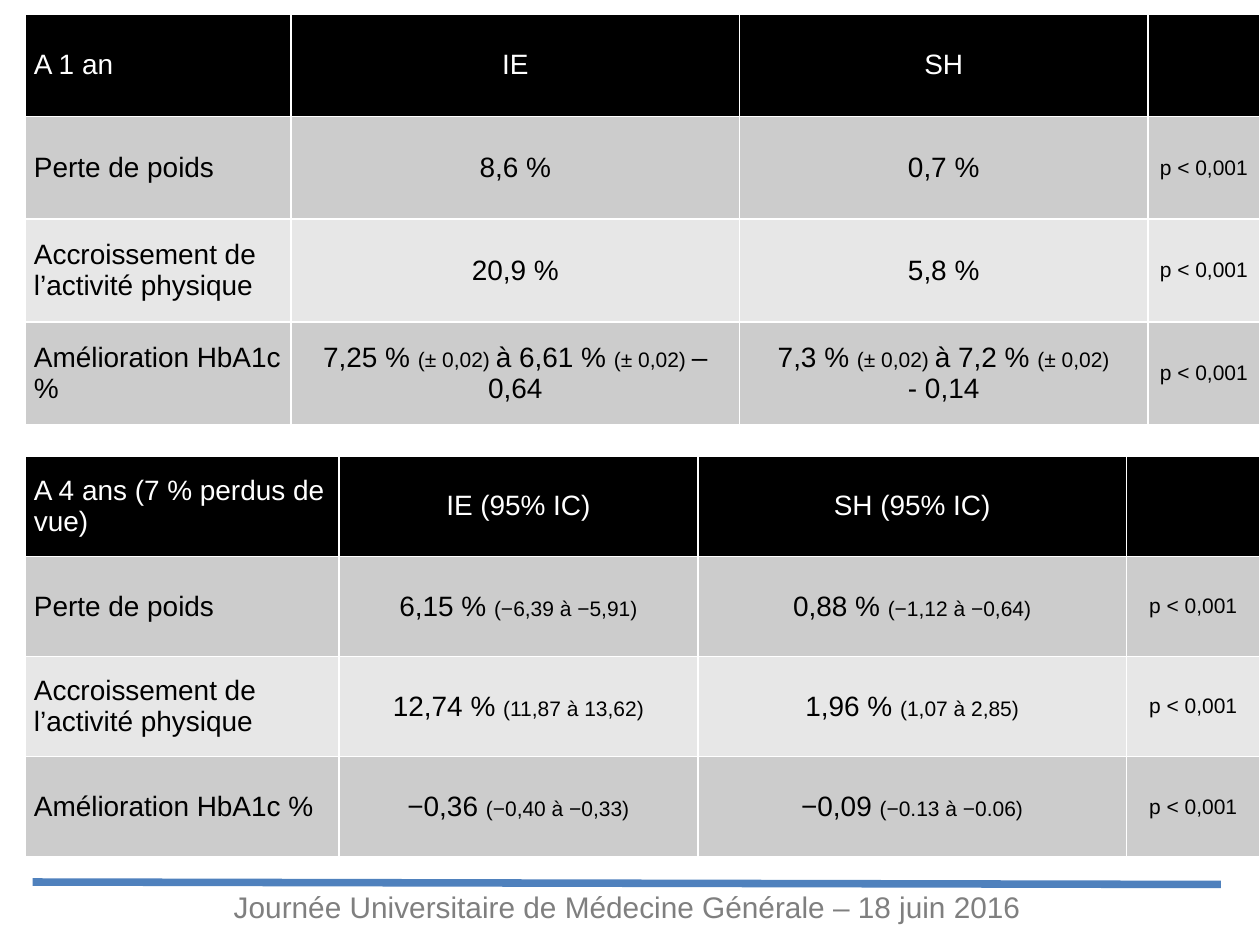
from lxml import etree
from pptx import Presentation
from pptx.dml.color import RGBColor
from pptx.enum import shapes, text
from pptx.oxml import ns
from pptx.util import Inches, Pt

BLACK = RGBColor(0x00, 0x00, 0x00)
WHITE = RGBColor(0xFF, 0xFF, 0xFF)
DARK_BAND = RGBColor(0xCC, 0xCC, 0xCC)
LIGHT_BAND = RGBColor(0xE7, 0xE7, 0xE7)
BLUE = RGBColor(0x4F, 0x81, 0xBD)
GREY = RGBColor(0x7F, 0x7F, 0x7F)

FONT = "Arial"
SIZES = (16, 12)
LEFT, WIDTH = 0.2, 9.8
FOOTER = "Journée Universitaire de Médecine Générale – 18 juin 2016"
P_VALUE = "|p < 0,001"
LOSS = "Perte de poids"
ACTIVITY = "Accroissement de l’activité physique"
HBA1C = "Amélioration HbA1c %"

# "|" switches between large and small text, a line break starts a paragraph
TABLES = [
    {
        "top": 0.11, "row": 0.815, "cols": (2.11, 3.56, 3.24, 0.89),
        "cells": [
            ("A 1 an", "IE", "SH", ""),
            (LOSS, "8,6 %", "0,7 %", P_VALUE),
            (ACTIVITY, "20,9 %", "5,8 %", P_VALUE),
            (HBA1C, "7,25 % |(± 0,02) |à 6,61 % |(± 0,02) |– 0,64",
             "7,3 % |(± 0,02) |à 7,2 % |(± 0,02)\n- 0,14", P_VALUE),
        ],
    },
    {
        "top": 3.62, "row": 0.795, "cols": (2.49, 2.85, 3.4, 1.06),
        "cells": [
            ("A 4 ans (7 % perdus de vue)", "IE (95% IC)", "SH (95% IC)", ""),
            (LOSS, "6,15 % |(−6,39 à −5,91)", "0,88 % |(−1,12 à −0,64)", P_VALUE),
            (ACTIVITY, "12,74 % |(11,87 à 13,62)", "1,96 % |(1,07 à 2,85)", P_VALUE),
            (HBA1C, "−0,36 |(−0,40 à −0,33)", "−0,09 |(−0.13 à −0.06)", P_VALUE),
        ],
    },
]


def add_run(p, words, size, color):
    r = p.add_run()
    r.text = words
    for name, value in {"name": FONT, "size": Pt(size), "bold": False}.items():
        setattr(r.font, name, value)
    r.font.color.rgb = color


def add_borders(cell):
    tc_pr = cell._tc.get_or_add_tcPr()
    for side in ("lnL", "lnR", "lnT", "lnB"):
        ln = etree.SubElement(tc_pr, ns.qn(f"a:{side}"), w=str(Pt(1)))
        fill = etree.SubElement(ln, ns.qn("a:solidFill"))
        etree.SubElement(fill, ns.qn("a:srgbClr"), val=str(WHITE))


def fill_cell(cell, words, row, col):
    add_borders(cell)
    cell.fill.solid()
    cell.fill.fore_color.rgb = BLACK if row == 0 else (LIGHT_BAND, DARK_BAND)[row % 2]
    formats = {
        "vertical_anchor": text.MSO_ANCHOR.MIDDLE,
        "margin_left": Inches(0.07), "margin_right": Inches(0.07),
        "margin_top": 0, "margin_bottom": 0,
    }
    for name, value in formats.items():
        setattr(cell, name, value)
    tf = cell.text_frame
    for i, line in enumerate(words.split("\n")):
        p = tf.add_paragraph() if i else tf.paragraphs[0]
        p.alignment = text.PP_ALIGN.CENTER if col else text.PP_ALIGN.LEFT
        for j, part in enumerate(line.split("|")):
            if part:
                add_run(p, part, SIZES[j % 2], BLACK if row else WHITE)


def add_results(s, top, row, cols, cells):
    frame = s.shapes.add_table(len(cells), len(cols), Inches(LEFT), Inches(top),
                               Inches(WIDTH), Inches(row * len(cells)))
    table = frame.table
    table.first_row = table.horz_banding = False
    for column, width in zip(table.columns, cols):
        column.width = Inches(width)
    for i, values in enumerate(cells):
        table.rows[i].height = Inches(row)
        for j, words in enumerate(values):
            fill_cell(table.cell(i, j), words, i, j)


def add_footer(s):
    line = s.shapes.add_connector(shapes.MSO_CONNECTOR.STRAIGHT, Inches(0.26),
                                  Inches(7), Inches(9.69), Inches(7.02))
    line.line.color.rgb = BLUE
    line.line.width = Pt(4.3)
    etree.SubElement(line._element.spPr, ns.qn("a:effectLst"))
    sp = s.shapes.add_textbox(Inches(0.26), Inches(7.06), Inches(9.44), Inches(0.34))
    tf = sp.text_frame
    tf.word_wrap = True
    p = tf.paragraphs[0]
    p.alignment = text.PP_ALIGN.CENTER
    p.line_spacing = 0.8
    add_run(p, FOOTER, 17, GREY)


def main():
    prs = Presentation()
    prs.slide_width, prs.slide_height = Inches(10), Inches(7.5)
    s = prs.slides.add_slide(prs.slide_layouts[6])
    add_footer(s)
    for results in TABLES:
        add_results(s, **results)
    prs.save("out.pptx")


if __name__ == "__main__":
    main()
